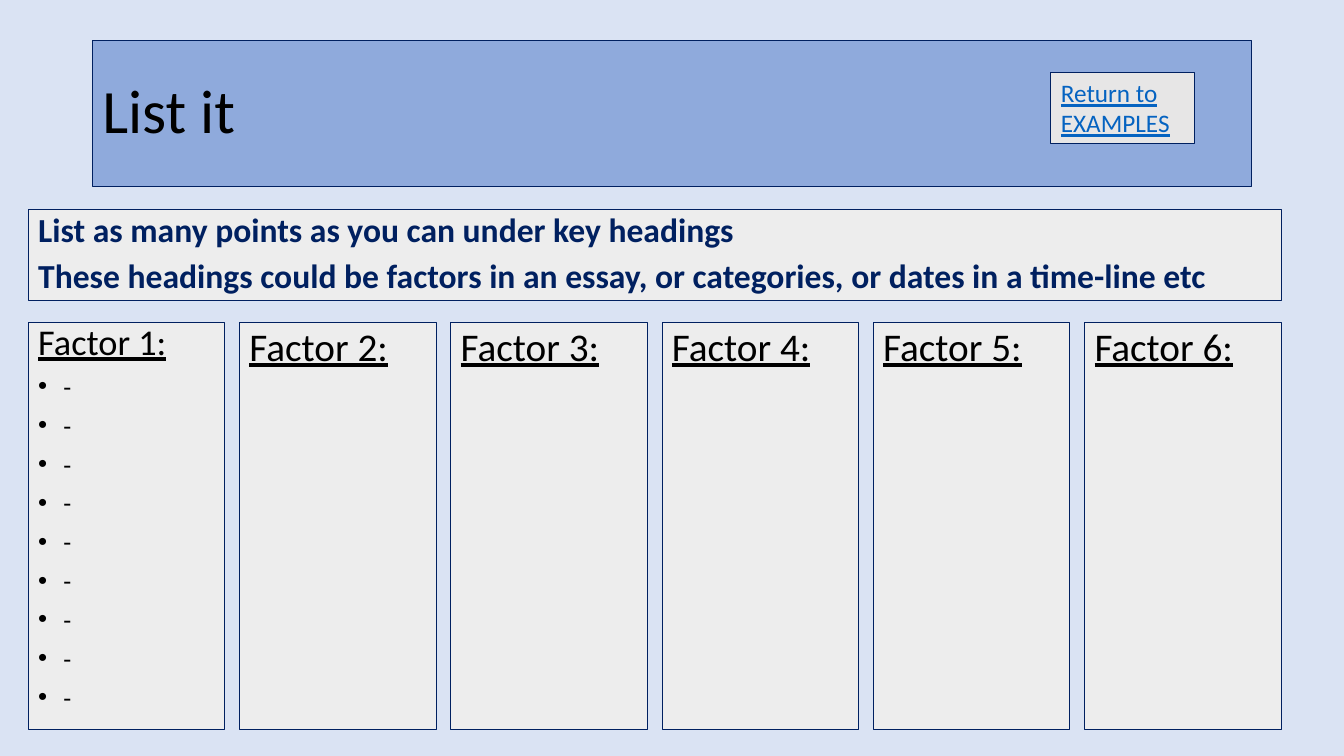
from lxml.etree import SubElement
from pptx import Presentation
from pptx.dml.color import RGBColor
from pptx.enum.shapes import MSO_SHAPE
from pptx.enum.text import MSO_ANCHOR, MSO_AUTO_SIZE, PP_ALIGN
from pptx.oxml.ns import qn
from pptx.util import Pt

NAVY, BLACK, PANEL = "002060", "000000", "EDEDED"
LEFT, WIDTH = 20.2, 894.9
COLUMNS, COLUMN_WIDTH = 6, 140.4


def colour(value):
    return RGBColor.from_string(value)


def add_panel(page, left, top, width, height, fill, anchor=MSO_ANCHOR.TOP):
    """Outlined rectangle; returns its text frame."""
    panel = page.shapes.add_shape(
        MSO_SHAPE.RECTANGLE, Pt(left), Pt(top), Pt(width), Pt(height))
    panel.shadow.inherit = False
    panel.fill.solid()
    panel.fill.fore_color.rgb = colour(fill)
    panel.line.color.rgb = colour(NAVY)
    panel.line.width = Pt(0.75)
    frame = panel.text_frame
    frame.word_wrap = True
    frame.vertical_anchor = anchor
    return frame


def write_lines(frame, lines, size, ink=BLACK, spacing=1.0, bullet=False, **style):
    """Fill the empty first paragraph, then append the rest."""
    for line in lines:
        first = not frame.text
        para = frame.paragraphs[0] if first else frame.add_paragraph()
        para.alignment = PP_ALIGN.LEFT
        para.line_spacing = spacing
        para.space_before = Pt(0 if first else 10)
        if bullet:
            add_bullet(para)
        span = para.add_run()
        span.text = line
        span.font.color.rgb = colour(ink)
        for name, value in {"name": "Calibri", "size": Pt(size), **style}.items():
            setattr(span.font, name, value)


def add_bullet(para):
    properties = para._p.get_or_add_pPr()
    properties.set("marL", str(Pt(18)))
    properties.set("indent", str(Pt(-18)))
    SubElement(properties, qn("a:buFont"), typeface="Arial")
    SubElement(properties, qn("a:buChar"), char="•")


def add_header(page, left, top, width, height):
    title = add_panel(page, left, top, width, height, "8FAADC", MSO_ANCHOR.MIDDLE)
    write_lines(title, ["List it"], 44, spacing=0.9)
    # Return button
    button = add_panel(page, left + width - 143.3, top + 23, 102.3, 51, "E7E6E6")
    button.auto_size = MSO_AUTO_SIZE.SHAPE_TO_FIT_TEXT
    write_lines(button, ["Return to EXAMPLES"], 18, "0563C1", underline=True)


def add_instructions(page, left, top, width, height):
    frame = add_panel(page, left, top, width, height, PANEL, MSO_ANCHOR.BOTTOM)
    write_lines(frame, [
        "List as many points as you can under key headings",
        "These headings could be factors in an essay, or categories, "
        "or dates in a time-line etc",
    ], 24, NAVY, 0.8, bold=True)


def add_factors(page, left, top, width, height):
    pitch = (width - COLUMN_WIDTH) / (COLUMNS - 1)
    for index in range(COLUMNS):
        frame = add_panel(page, left + index * pitch, top, COLUMN_WIDTH, height, PANEL)
        heading = [f"Factor {index + 1}:"]
        if index == 0:
            # The first column starts the list
            write_lines(frame, heading, 25.9, spacing=0.8, underline=True)
            write_lines(frame, ["-"] * 9, 18.5, spacing=0.8, bullet=True)
        else:
            write_lines(frame, heading, 28, spacing=0.9, underline=True)


def main():
    deck = Presentation()
    deck.slide_width, deck.slide_height = Pt(960), Pt(540)
    page = deck.slides.add_slide(deck.slide_layouts[6])
    page.background.fill.solid()
    page.background.fill.fore_color.rgb = colour("DAE3F3")

    add_header(page, 66, 28.8, 828, 104.4)
    add_instructions(page, LEFT, 149.6, WIDTH, 64.8)
    add_factors(page, LEFT, 230.4, WIDTH, 290.4)
    deck.save("out.pptx")


if __name__ == "__main__":
    main()
